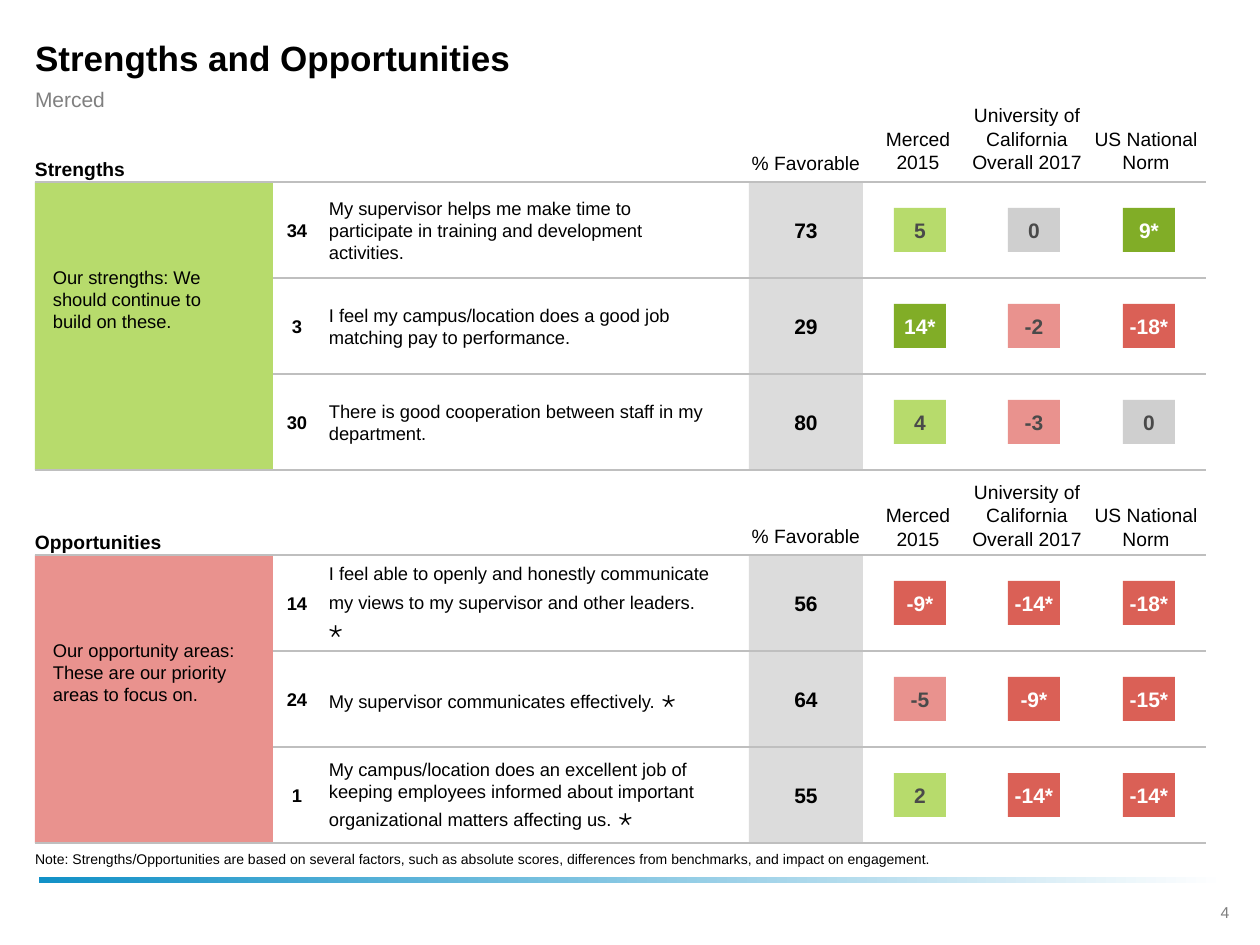
import itertools

import pptx
import pptx.dml.color
import pptx.enum.shapes
import pptx.enum.text
import pptx.util
from lxml import etree

PX = 914400 / 126
LEFT = 35
ROW_H = 96
NUMBER_X, QUESTION_X, FAVORABLE_X = 273, 320, 749
FAVORABLE_W = 114
COLUMN_EDGES = (LEFT, NUMBER_X, FAVORABLE_X, 863, 977, 1091, 1206)
CHIP_XS = (894, 1008, 1123)
BENCHMARKS = (
    ("Merced 2015", 859),
    ("University of California Overall 2017", 968),
    ("US National Norm", 1087),
)
BLACK, GREY, LINE = "000000", "DCDCDC", "BFBFBF"
GREEN, RED = "B7DB6C", "E9928E"
STRONG_GREEN, STRONG_RED, NEUTRAL = "81AD27", "DA6056", "CFCFCF"
TOP = pptx.enum.text.MSO_ANCHOR.TOP
MIDDLE = pptx.enum.text.MSO_ANCHOR.MIDDLE
BOTTOM = pptx.enum.text.MSO_ANCHOR.BOTTOM
ALIGN_LEFT = pptx.enum.text.PP_ALIGN.LEFT
CENTER = pptx.enum.text.PP_ALIGN.CENTER

STRENGTHS = (
    ("34", "My supervisor helps me make time to participate in training and "
     "development activities.", "73", ("5", "0", "9*")),
    ("3", "I feel my campus/location does a good job matching pay to performance.",
     "29", ("14*", "-2", "-18*")),
    ("30", "There is good cooperation between staff in my department.",
     "80", ("4", "-3", "0")),
)
OPPORTUNITIES = (
    ("14", "I feel able to openly and honestly communicate my views to my "
     "supervisor and other leaders. ⋆", "56", ("-9*", "-14*", "-18*")),
    ("24", "My supervisor communicates effectively. ⋆",
     "64", ("-5", "-9*", "-15*")),
    ("1", "My campus/location does an excellent job of keeping employees informed "
     "about important organizational matters affecting us. ⋆",
     "55", ("2", "-14*", "-14*")),
)


def px(n):
    """Turn pixels into EMU."""
    return pptx.util.Emu(round(n * PX))


def rgb(color):
    """Turn a hex string into a colour."""
    return pptx.dml.color.RGBColor.from_string(color)


def set_text(tf, text, size, color=BLACK, bold=False, align=ALIGN_LEFT,
             anchor=TOP, insets=(0, 0, 0, 0), wrap=True):
    """Fill a text frame with one paragraph and return it."""
    tf.word_wrap = wrap
    tf.vertical_anchor = anchor
    tf.margin_left, tf.margin_top, tf.margin_right, tf.margin_bottom = map(px, insets)
    p = tf.paragraphs[0]
    p.text = text
    p.alignment = align
    font = p.font
    font.name, font.size, font.bold = "Arial", pptx.util.Pt(size), bold
    font.color.rgb = rgb(color)
    return p


def add_text(s, x, y, w, h, text, size, **style):
    """Add a text box and return its paragraph."""
    sp = s.shapes.add_textbox(px(x), px(y), px(w), px(h))
    return set_text(sp.text_frame, text, size, **style)


def add_rect(s, x, y, w, h, color):
    """Add a plain filled rectangle."""
    sp = s.shapes.add_shape(pptx.enum.shapes.MSO_SHAPE.RECTANGLE,
                            px(x), px(y), px(w), px(h))
    sp.shadow.inherit = False
    sp.fill.solid()
    sp.fill.fore_color.rgb = rgb(color)
    sp.line.fill.background()
    return sp


def add_rule(s, y, edges):
    """Add a horizontal rule made of one border per column."""
    for x1, x2 in itertools.pairwise(edges):
        line = s.shapes.add_connector(pptx.enum.shapes.MSO_CONNECTOR.STRAIGHT,
                                      px(x1), px(y), px(x2), px(y))
        line.line.color.rgb = rgb(LINE)
        line.line.width = pptx.util.Pt(0.75)
        etree.SubElement(line._element.spPr, pptx.oxml.ns.qn("a:effectLst"))


def add_chip(s, x, y, value):
    """Add a difference chip coloured by its sign and significance."""
    significant = value.endswith("*")
    if value == "0":
        fill = NEUTRAL
    elif value.startswith("-"):
        fill = STRONG_RED if significant else RED
    else:
        fill = STRONG_GREEN if significant else GREEN
    sp = add_rect(s, x, y, 52, 44, fill)
    set_text(sp.text_frame, value, 12, color="FFFFFF" if significant else "4A4A4A",
             bold=True, align=CENTER, anchor=MIDDLE, insets=(0, 6, 0, 6), wrap=False)


def add_question(s, x, y, text):
    """Add a question, with its star mark enlarged if it has one."""
    body, star, _ = text.partition(" ⋆")
    p = add_text(s, x, y, 404, 90, body, 10.5, anchor=MIDDLE, insets=(9, 0, 13, 0))
    if star:
        r = p.add_run()
        r.text = star
        r.font.size = pptx.util.Pt(14)


def add_row(s, y, number, question, favorable, differences):
    """Add one survey item with its scores."""
    add_rect(s, FAVORABLE_X, y, FAVORABLE_W, ROW_H, GREY)
    add_text(s, NUMBER_X, y + 37, 48, 22, number, 10.5, bold=True,
             align=CENTER, anchor=MIDDLE)
    add_question(s, QUESTION_X, y + 3, question)
    add_text(s, FAVORABLE_X, y + 36, FAVORABLE_W, 24, favorable, 12, bold=True,
             align=CENTER, anchor=MIDDLE)
    for x, value in zip(CHIP_XS, differences):
        add_chip(s, x, y + 26, value)


def add_section(s, y, header_y, title, summary, color, rows):
    """Add a titled block of survey items with column headers."""
    add_text(s, LEFT, y - 31, 238, 29, title, 11, bold=True, anchor=BOTTOM)
    add_text(s, FAVORABLE_X, y - 31, FAVORABLE_W, 29, "% Favorable", 11, align=CENTER)
    for name, x in BENCHMARKS:
        add_text(s, x, header_y, 118, 158, name, 11, align=CENTER, anchor=BOTTOM,
                 insets=(4, 0, 4, 1))
    add_rect(s, LEFT, y, NUMBER_X - LEFT, ROW_H * len(rows), color)
    add_text(s, 53, y + 84, 190, 116, summary, 10.5)
    for i, row in enumerate(rows):
        add_row(s, y + i * ROW_H, *row)
    for i in range(len(rows) + 1):
        outer = i in (0, len(rows))
        add_rule(s, y + i * ROW_H, COLUMN_EDGES if outer else COLUMN_EDGES[1:])


def add_footer(s):
    """Add the note, the gradient bar and the page number."""
    add_text(s, LEFT, 850, 1190, 18,
             "Note: Strengths/Opportunities are based on several factors, such as "
             "absolute scores, differences from benchmarks, and impact on engagement.",
             8, anchor=MIDDLE)
    fill = add_rect(s, 39, 877, 1187, 6, "FFFFFF").fill
    fill.gradient()
    fill.gradient_angle = 0
    for stop, position, color in zip(fill.gradient_stops, (0, 1), ("1291C7", "FFFFFF")):
        stop.position = position
        stop.color.rgb = rgb(color)
    add_text(s, 1192, 897, 66, 32, "4", 9, color="7F7F7F", align=CENTER,
             insets=(13, 6, 13, 6))


def main():
    """Build the slide and save it."""
    prs = pptx.Presentation()
    prs.slide_width, prs.slide_height = px(1260), px(945)
    s = prs.slides.add_slide(prs.slide_layouts[6])
    add_text(s, LEFT, 34, 1190, 48, "Strengths and Opportunities", 20, bold=True,
             anchor=MIDDLE, insets=(0, 0, 44, 0))
    add_text(s, LEFT, 86, 1190, 27, "Merced", 12, color="808080",
             anchor=MIDDLE, insets=(0, 0, 44, 0))
    add_section(s, 182, 16, "Strengths",
                "Our strengths: We should continue to build on these.",
                GREEN, STRENGTHS)
    add_section(s, 555, 393, "Opportunities",
                "Our opportunity areas: These are our priority areas to focus on.",
                RED, OPPORTUNITIES)
    add_footer(s)
    prs.save("out.pptx")


if __name__ == "__main__":
    main()
